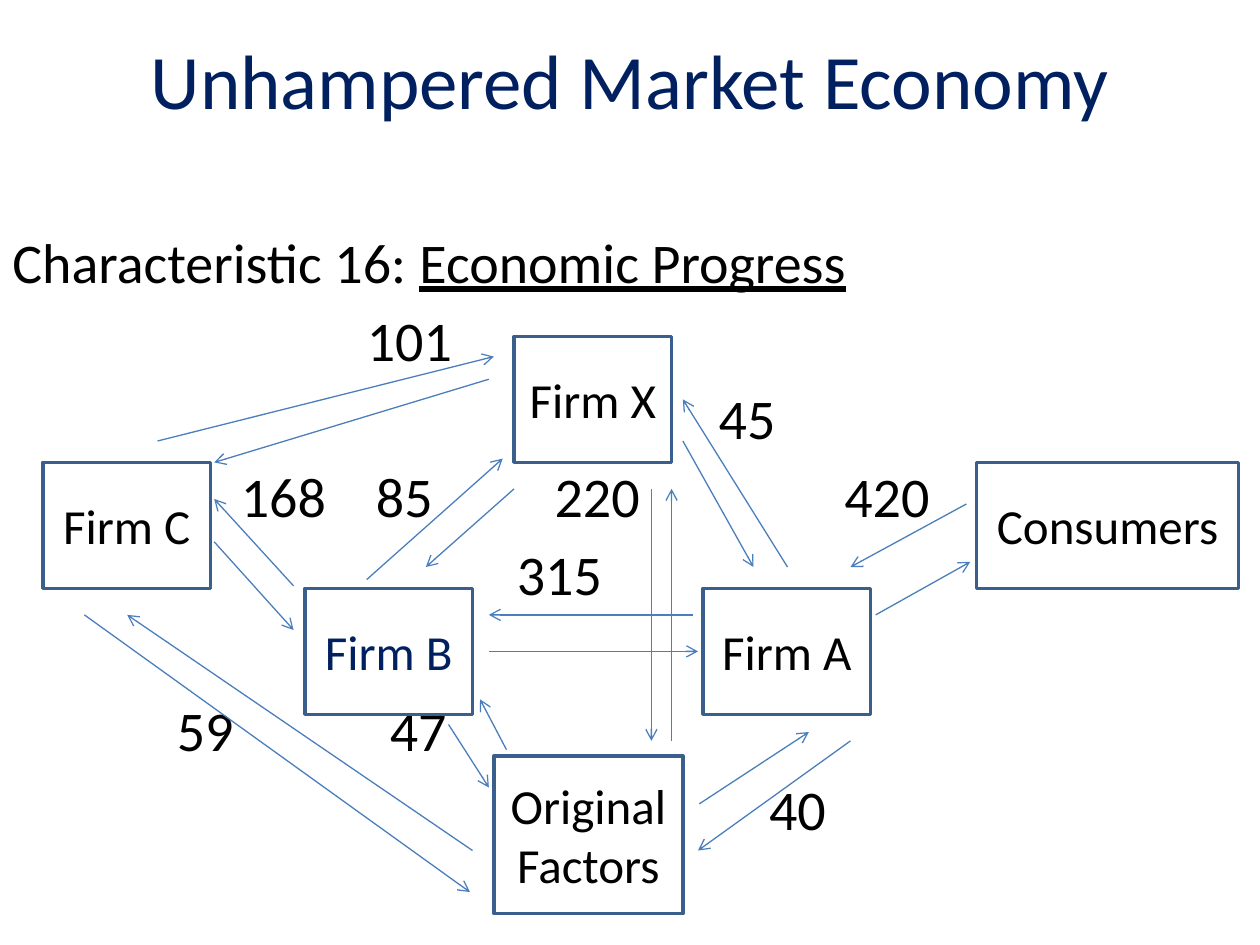
from lxml import etree
from pptx import Presentation
from pptx.dml.color import RGBColor
from pptx.enum import shapes, text
from pptx.oxml.ns import qn
from pptx.util import Inches, Pt

BLACK = RGBColor(0, 0, 0)
WHITE = RGBColor(0xFF, 0xFF, 0xFF)
NAVY = RGBColor(0x00, 0x20, 0x60)
BORDER = RGBColor(0x3A, 0x5F, 0x8C)
ARROW = RGBColor(0x4B, 0x7E, 0xBC)
FONT = "Calibri"

WIDTH, HEIGHT = 10, 7.5
ROW_TOP, ROW_PITCH, ROW_HEIGHT = 1.8, 0.62, 0.54
AMOUNT_WIDTH = 1

TITLE = "Unhampered Market Economy"
HEADING = [("Characteristic 16: ", False), ("Economic Progress", True)]

# (amount, centre x, text row below the heading)
AMOUNTS = [
    ("101", 3.25, 1), ("45", 5.93, 2),
    ("168", 2.25, 3), ("85", 3.21, 3), ("220", 4.74, 3), ("420", 7.04, 3),
    ("315", 4.44, 4), ("59", 1.63, 6), ("47", 3.32, 6), ("40", 6.33, 7),
]

# (name, left, top, width, height, text colour)
PARTIES = [
    ("Firm X", 4.08, 2.67, 1.25, 1, BLACK),
    ("Consumers", 7.75, 3.67, 2.08, 1, BLACK),
    ("Firm A", 5.58, 4.67, 1.33, 1, BLACK),
    ("Firm C", 0.34, 3.67, 1.33, 1, BLACK),
    ("Firm B", 2.42, 4.67, 1.33, 1, NAVY),
    ("Original Factors", 3.92, 6, 1.5, 1.25, BLACK),
]

# Flows between two parties: (from x, from y, to x, to y)
FLOWS = {
    "Consumers, A": [(7.67, 4, 6.75, 4.5), (6.95, 4.88, 7.7, 4.46)],
    "A, B": [(5.5, 4.88, 3.88, 4.88), (3.88, 5.17, 5.54, 5.17)],
    "X, Factors": [(5.17, 3.88, 5.17, 5.88), (5.33, 5.88, 5.33, 3.88)],
    "B, X": [(2.91, 4.6, 3.99, 3.64), (4.08, 3.88, 3.38, 4.5)],
    "C, Factors": [(0.67, 4.88, 3.73, 7.08), (3.75, 6.75, 1.01, 4.88)],
    "B, Factors": [(3.56, 5.75, 3.88, 6.25), (4.02, 5.95, 3.81, 5.55)],
    "B, C": [(2.33, 4.65, 1.7, 3.96), (1.7, 4.3, 2.33, 5)],
    "A, Factors": [(6.75, 5.88, 5.54, 6.75), (5.55, 6.38, 6.42, 5.81)],
    "A, X": [(6.25, 4.5, 5.42, 3.17), (5.42, 3.5, 5.98, 4.5)],
    "C, X": [(1.25, 3.5, 3.92, 2.83), (3.88, 3.01, 1.7, 3.67)],
}


def write(shape, runs, size, color, align=text.PP_ALIGN.CENTER):
    """Fill a shape with one paragraph of (words, underlined) runs."""
    tf = shape.text_frame
    tf.word_wrap = True
    tf.vertical_anchor = text.MSO_ANCHOR.MIDDLE
    tf.margin_top = tf.margin_bottom = 0
    p = tf.paragraphs[0]
    p.alignment = align
    for words, underlined in runs:
        r = p.add_run()
        r.text = words
        r.font.name, r.font.size = FONT, Pt(size)
        r.font.color.rgb = color
        r.font.underline = underlined


def add_label(slide, box, runs, size, color, align=text.PP_ALIGN.CENTER):
    sp = slide.shapes.add_textbox(*map(Inches, box))
    write(sp, runs, size, color, align)


def add_party(slide, name, left, top, width, height, color):
    sp = slide.shapes.add_shape(shapes.MSO_SHAPE.RECTANGLE,
                                *map(Inches, (left, top, width, height)))
    sp.shadow.inherit = False
    sp.fill.solid()
    sp.fill.fore_color.rgb = WHITE
    sp.line.color.rgb = BORDER
    sp.line.width = Pt(2)
    write(sp, [(name, False)], 28, color)


def add_arrow(slide, ends):
    cn = slide.shapes.add_connector(shapes.MSO_CONNECTOR.STRAIGHT,
                                    *map(Inches, ends))
    cn.line.color.rgb = ARROW
    cn.line.width = Pt(0.75)
    properties = cn._element.spPr
    etree.SubElement(properties.find(qn("a:ln")), qn("a:tailEnd"), type="arrow")
    etree.SubElement(properties, qn("a:effectLst"))


def main():
    prs = Presentation()
    prs.slide_width, prs.slide_height = Inches(WIDTH), Inches(HEIGHT)
    slide = prs.slides.add_slide(prs.slide_layouts[6])

    add_label(slide, (0, 0, WIDTH, HEIGHT / 6), [(TITLE, False)], 44, NAVY)
    add_label(slide, (0, ROW_TOP, WIDTH, ROW_HEIGHT), HEADING, 32, BLACK,
              text.PP_ALIGN.LEFT)
    for amount, center, row in AMOUNTS:
        box = (center - AMOUNT_WIDTH / 2, ROW_TOP + row * ROW_PITCH,
               AMOUNT_WIDTH, ROW_HEIGHT)
        add_label(slide, box, [(amount, False)], 32, BLACK)
    for party in PARTIES:
        add_party(slide, *party)
    for pair in FLOWS.values():
        for ends in pair:
            add_arrow(slide, ends)

    prs.save("out.pptx")


if __name__ == "__main__":
    main()
